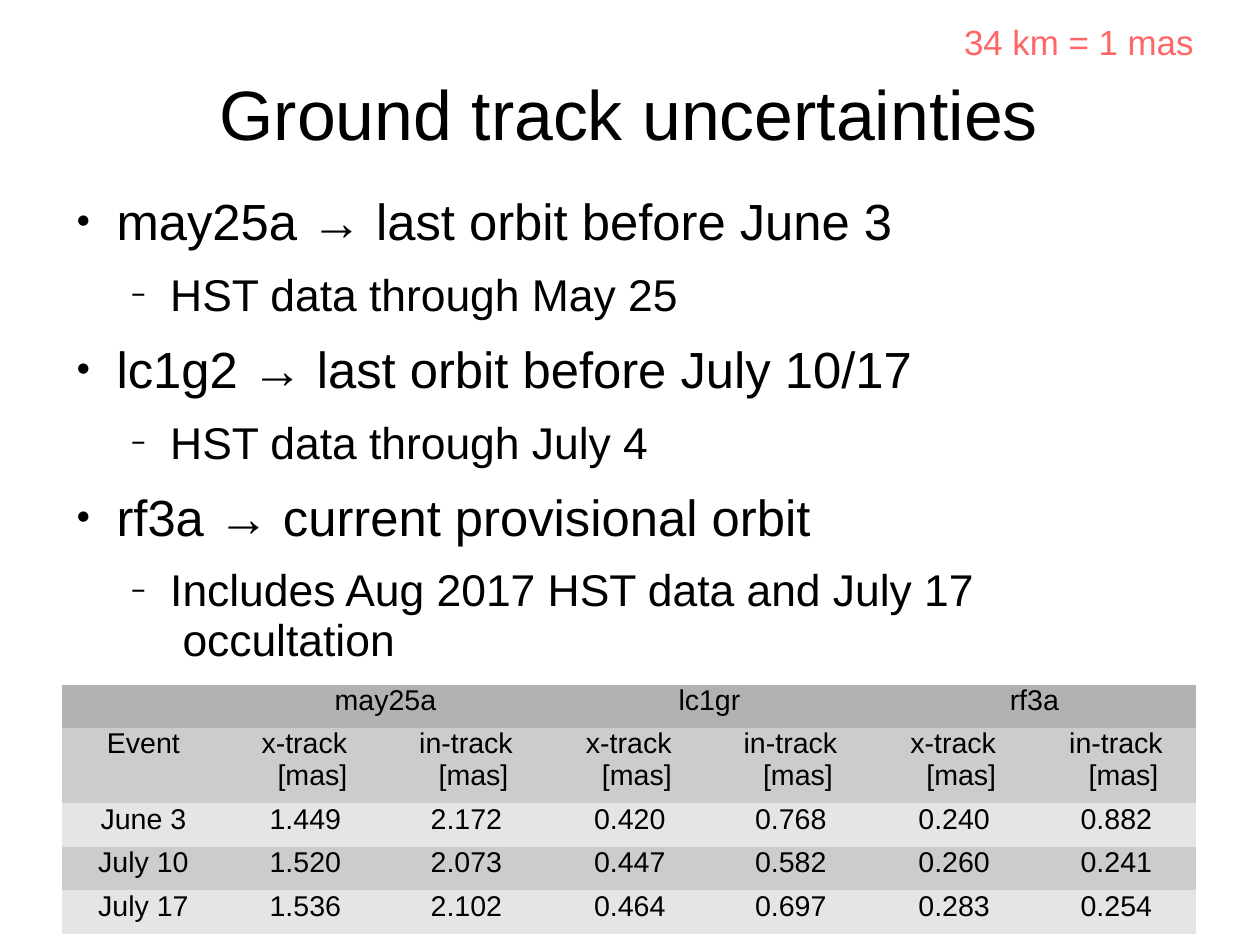
from dataclasses import dataclass
from typing import Any, NamedTuple

from lxml import etree
from pptx import Presentation
from pptx import util as u
from pptx.dml.color import RGBColor
from pptx.enum import text as t
from pptx.oxml.ns import qn


@dataclass(frozen=True)
class Theme:
    """Fonts, colours and type sizes of the slide."""
    font: str = "Arial"
    mark: str = "Calibri"
    ink: str = "000000"
    note: str = "FF6666"
    head: str = "B2B2B2"
    dark: str = "CCCCCC"
    light: str = "E5E5E5"
    title: float = 44
    small: float = 22
    cell: float = 18


class Level(NamedTuple):
    """Look of one list level."""
    size: float
    left: float
    char: str
    pct: int
    line: float | None
    after: float


class Item(NamedTuple):
    """One line of the list."""
    text: str
    depth: int


class Spot(NamedTuple):
    """One filled table cell."""
    row: int
    col: int
    text: str
    left: float = 0
    hang: float = 0
    align: t.PP_ALIGN = t.PP_ALIGN.LEFT


LOOK = Theme()
LEVELS = [Level(32, 0.35, "●", 44, None, 12.25), Level(28, 0.82, "–", 75, 31.5, 11)]
HANG = 0.35
ITEMS = [
    Item("may25a → last orbit before June 3", 0),
    Item("HST data through May 25", 1),
    Item("lc1g2 → last orbit before July 10/17", 0),
    Item("HST data through July 4", 1),
    Item("rf3a → current provisional orbit", 0),
    Item("Includes Aug 2017 HST data and July 17\v occultation", 1),
]
ORBITS = [Spot(0, 0, "may25a", 2.39), Spot(0, 4, "lc1gr", 0.03), Spot(0, 7, "rf3a", 0.06)]
TRACKS = ["x-track [mas]", "in-track [mas]"]
HANGS = [0.14, 0.17]
EVENTS = [
    ["June 3", "1.449", "2.172", "0.420", "0.768", "0.240", "0.882"],
    ["July 10", "1.520", "2.073", "0.447", "0.582", "0.260", "0.241"],
    ["July 17", "1.536", "2.102", "0.464", "0.697", "0.283", "0.254"],
]
WIDTHS = [1.43, 1.39, 1.45, 1.1, 0.59, 1.15, 1.13, 1.69]
HEIGHTS = [0.38, 0.66, 0.38, 0.38, 0.38]
FILLS = [LOOK.head, LOOK.dark, LOOK.light, LOOK.dark, LOOK.light]
COLS = [1, 2, 3, 4, 6, 7]
LEFTS = [0.39, 0.41, 0.39, 0.7, 0.39, 0.68]


def write(para: Any, text: str, *, size: float, color: str = LOOK.ink,
          align: t.PP_ALIGN = t.PP_ALIGN.LEFT, line: float | None = None,
          after: float = 0, left: float = 0, hang: float = 0) -> None:
    """Fill a paragraph with formatted text."""
    para.text = text
    para.alignment = align
    para.space_before, para.space_after = u.Pt(0), u.Pt(after)
    if line:
        para.line_spacing = u.Pt(line)
    props = para._p.get_or_add_pPr()
    props.set("marL", str(u.Inches(left)))
    props.set("indent", str(u.Inches(-hang)))
    for run in para.runs:
        run.font.name, run.font.size = LOOK.font, u.Pt(size)
        run.font.color.rgb = RGBColor.from_string(color)


def place(shape: Any, left: float, top: float, width: float, height: float) -> Any:
    """Move a text shape, clear its insets and return its frame."""
    shape.left, shape.top = u.Inches(left), u.Inches(top)
    shape.width, shape.height = u.Inches(width), u.Inches(height)
    frame = shape.text_frame
    frame.margin_left = frame.margin_right = u.Inches(0)
    frame.margin_top = frame.margin_bottom = u.Inches(0)
    frame.word_wrap = True
    frame.auto_size = t.MSO_AUTO_SIZE.NONE
    frame.vertical_anchor = t.MSO_ANCHOR.TOP
    return frame


def bullet(para: Any, level: Level) -> None:
    """Give a paragraph its bullet."""
    props = para._p.get_or_add_pPr()
    for tag, key, value in (("a:buSzPct", "val", str(level.pct * 1000)),
                            ("a:buFont", "typeface", LOOK.mark),
                            ("a:buChar", "char", level.char)):
        etree.SubElement(props, qn(tag)).set(key, value)


def add_list(frame: Any) -> None:
    """Write the orbit list into the body."""
    for i, item in enumerate(ITEMS):
        para = frame.add_paragraph() if i else frame.paragraphs[0]
        level = LEVELS[item.depth]
        para.level = item.depth
        write(para, item.text, size=level.size, line=level.line, after=level.after,
              left=level.left, hang=HANG)
        bullet(para, level)


def spots() -> list[Spot]:
    """List all filled cells of the table."""
    found = list(ORBITS)
    for i, (col, left) in enumerate(zip(COLS, LEFTS)):
        found.append(Spot(1, col, TRACKS[i % 2], left + 0.07, HANGS[i % 2]))
        found += [Spot(r, col, event[i + 1], left) for r, event in enumerate(EVENTS, 2)]
    names = ["Event"] + [event[0] for event in EVENTS]
    return found + [Spot(r, 0, name, align=t.PP_ALIGN.CENTER)
                    for r, name in enumerate(names, 1)]


def add_grid(slide: Any) -> None:
    """Draw the table of track errors."""
    shape = slide.shapes.add_table(len(HEIGHTS), len(WIDTHS), u.Inches(0.54), u.Inches(5.99),
                                   u.Inches(sum(WIDTHS)), u.Inches(sum(HEIGHTS)))
    grid = shape.table
    grid.first_row = grid.horz_banding = False
    for style in grid._tbl.iter(qn("a:tableStyleId")):
        style.text = "{2D5ABB26-0587-4C30-8999-92F81FD0307C}"
    for col, width in zip(grid.columns, WIDTHS):
        col.width = u.Inches(width)
    for row, height, fill in zip(grid.rows, HEIGHTS, FILLS):
        row.height = u.Inches(height)
        for cell in row.cells:
            cell.margin_left = cell.margin_right = u.Inches(0)
            cell.margin_top = cell.margin_bottom = u.Inches(0)
            cell.fill.solid()
            cell.fill.fore_color.rgb = RGBColor.from_string(fill)
    grid.cell(0, 0).merge(grid.cell(0, 2))
    for r in range(1, len(HEIGHTS)):
        grid.cell(r, 4).merge(grid.cell(r, 5))
    for spot in spots():
        para = grid.cell(spot.row, spot.col).text_frame.paragraphs[0]
        write(para, spot.text, size=LOOK.cell, align=spot.align,
              left=spot.left, hang=spot.hang)


def main() -> None:
    """Build and save the slide."""
    deck = Presentation()
    deck.slide_width, deck.slide_height = u.Inches(11.03), u.Inches(8.26)
    slide = deck.slides.add_slide(deck.slide_layouts[1])
    title = place(slide.shapes.title, 1.51, 0.62, 8, 0.73)
    write(title.paragraphs[0], "Ground track uncertainties", size=LOOK.title,
          align=t.PP_ALIGN.CENTER)
    add_list(place(slide.placeholders[1], 0.67, 1.66, 8.6, 4.2))
    add_grid(slide)
    box = slide.shapes.add_textbox(0, 0, 0, 0)
    note = place(box, 8.44, 0.18, 2.1, 0.37)
    write(note.paragraphs[0], "34 km = 1 mas", size=LOOK.small, color=LOOK.note)
    deck.save("out.pptx")


if __name__ == "__main__":
    main()
